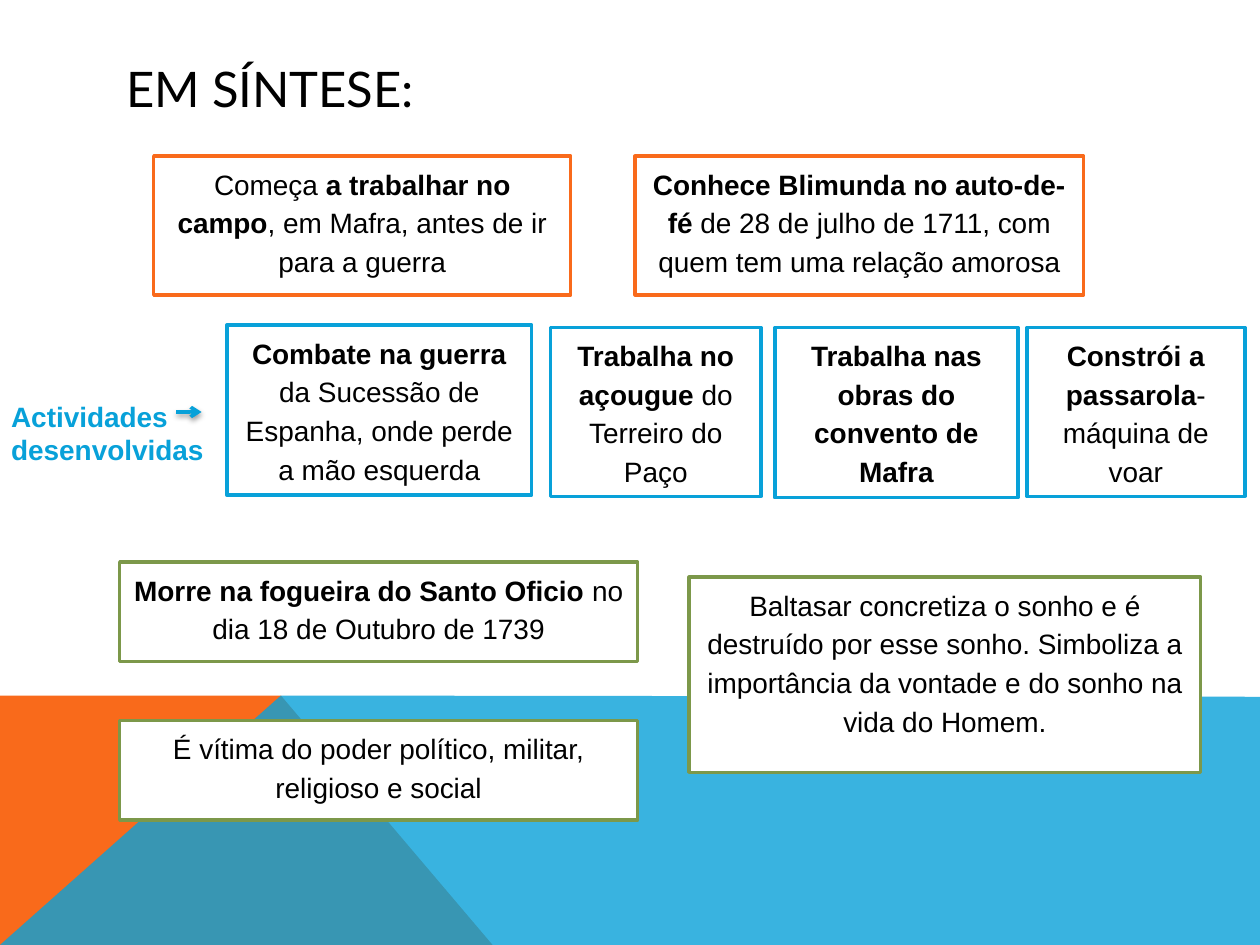
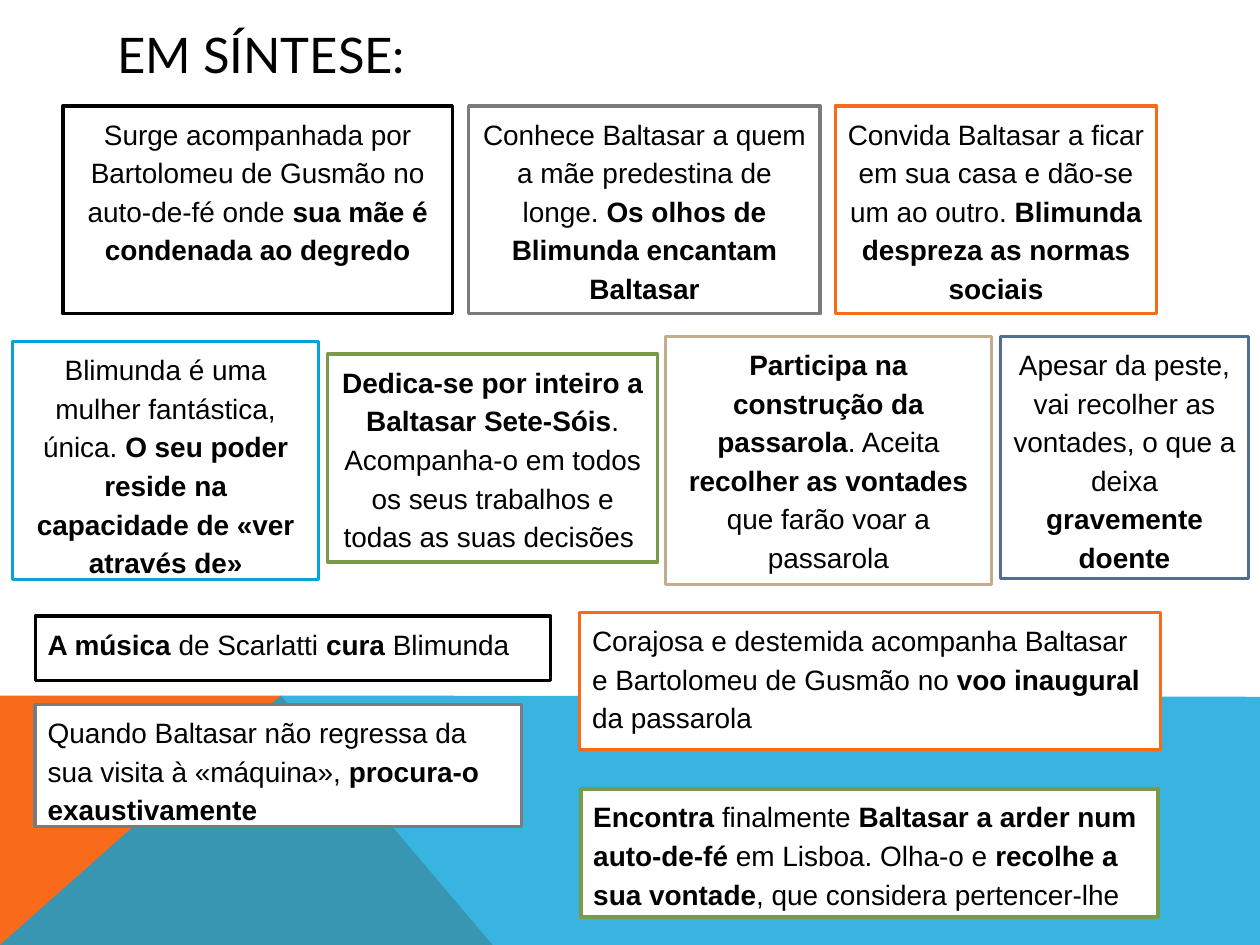
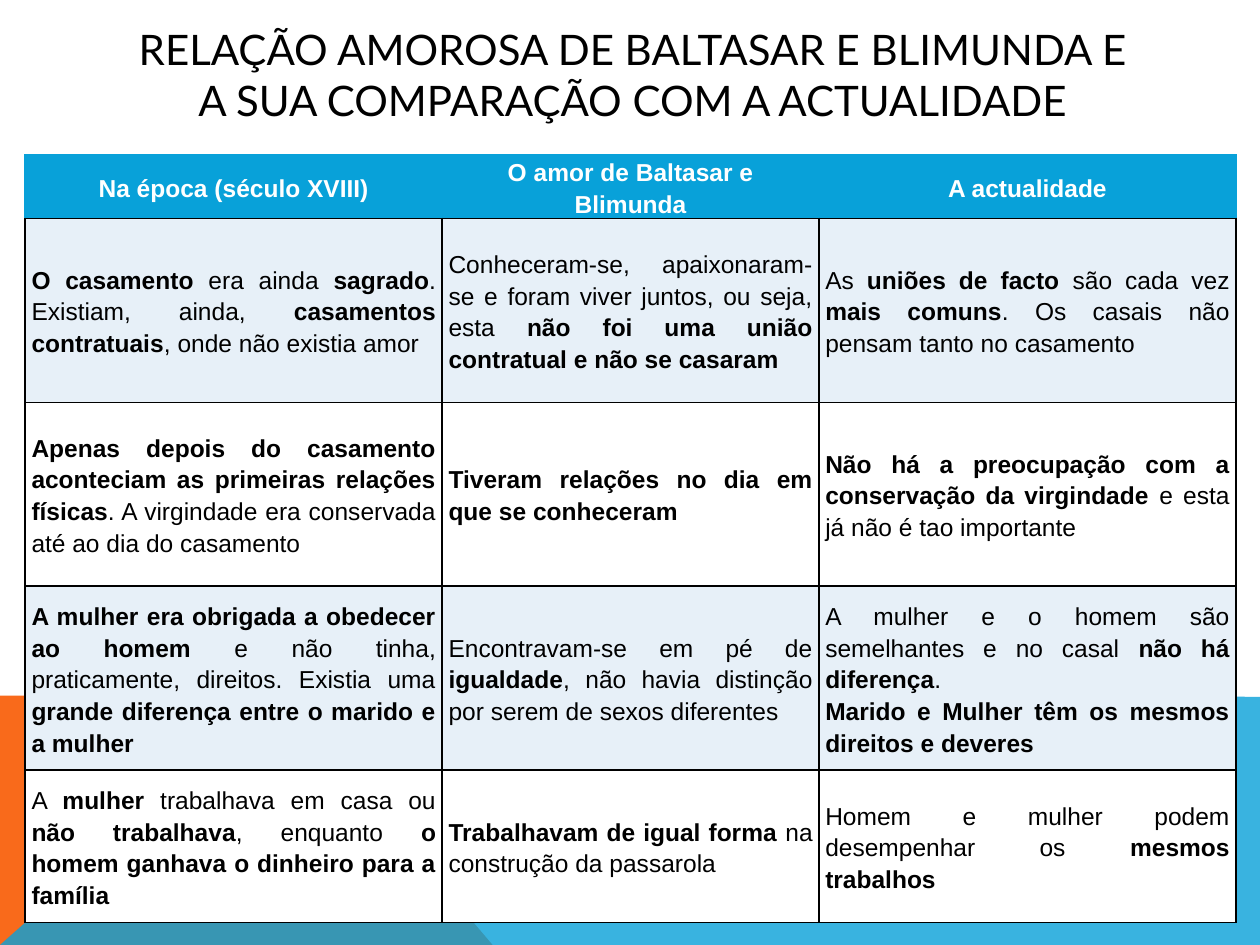
from dataclasses import dataclass

from lxml import etree
from pptx import Presentation
from pptx import util as u
from pptx.dml.color import RGBColor
from pptx.enum import shapes, text
from pptx.oxml import ns

COLORS = {
    "black": "000000",
    "white": "FFFFFF",
    "orange": "F96A1B",
    "blue": "08A1D9",
    "green": "7C984A",
    "gray": "797B7E",
    "tan": "C2AD8D",
    "navy": "506E94",
    "pale": "E7F0F8",
}
COLUMNS, ROWS = 100, 75
WIDTH, HEIGHT = u.Inches(10), u.Inches(7.5)
LEFT, CENTER, JUSTIFY = text.PP_ALIGN.LEFT, text.PP_ALIGN.CENTER, text.PP_ALIGN.JUSTIFY
BODY_FONT, TITLE_FONT = "Arial", "Lato"
LINE_WIDTH = u.Pt(2)


@dataclass
class Card:
    color: str
    left: float
    top: float
    width: float
    height: float
    words: str
    align: text.PP_ALIGN = CENTER


@dataclass
class Band:
    color: str
    opacity: int
    corners: list[tuple[float, float]]


BANDS = [
    Band("orange", 100, [(0, 75), (0, 55.2), (22.3, 55.2), (39.1, 75)]),
    Band("blue", 80, [(0, 75), (22.3, 55.2), (100, 55.3), (100, 75)]),
]

BALTASAR_CARDS = [
    Card("orange", 12.2, 12.4, 33.1, 11,
         "Começa *a trabalhar no campo*, em Mafra, antes de ir para a guerra"),
    Card("orange", 50.4, 12.4, 35.6, 11,
         "*Conhece Blimunda no auto-de-fé *de 28 de julho de 1711, com quem tem uma relação amorosa"),
    Card("blue", 18, 25.8, 24.2, 13.5,
         "*Combate na guerra *da Sucessão de Espanha, onde perde a mão esquerda"),
    Card("blue", 43.7, 26, 16.7, 13.4, "*Trabalha no açougue *do Terreiro do Paço"),
    Card("blue", 61.5, 26, 19.3, 13.5, "*Trabalha nas obras do convento de Mafra*"),
    Card("blue", 81.5, 26, 17.3, 13.4, "*Constrói a passarola*- máquina de voar"),
    Card("green", 9.5, 44.6, 41.1, 7.9,
         "*Morre na fogueira do Santo Oficio *no dia 18 de Outubro de 1739"),
    Card("green", 9.5, 57.2, 41.1, 7.9,
         "É vítima do poder político, militar, religioso e social"),
    Card("green", 54.7, 45.8, 40.6, 15.5,
         "Baltasar concretiza o sonho e é destruído por esse sonho. "
         "Simboliza a importância da vontade e do sonho na vida do Homem."),
]

BLIMUNDA_CARDS = [
    Card("black", 5, 8.4, 30.9, 16.5,
         "Surge acompanhada por Bartolomeu de Gusmão no auto-de-fé onde "
         "*sua mãe é condenada ao degredo*"),
    Card("gray", 37.2, 8.4, 27.9, 16.5,
         "Conhece Baltasar a quem a mãe predestina de longe. "
         "*Os olhos de Blimunda encantam Baltasar*"),
    Card("orange", 66.3, 8.4, 25.5, 16.5,
         "Convida Baltasar a ficar em sua casa e dão-se um ao outro. "
         "*Blimunda despreza as normas sociais*"),
    Card("blue", 1, 27.1, 24.3, 18.9,
         "Blimunda é uma mulher fantástica, única. "
         "*O seu poder reside na capacidade de «ver através de»*"),
    Card("green", 26, 28.1, 26.2, 16.5,
         "*Dedica-se por inteiro a Baltasar Sete-Sóis*. "
         "Acompanha-o em todos os seus trabalhos e todas as suas decisões "),
    Card("tan", 52.8, 26.7, 25.9, 19.7,
         "*Participa na construção da passarola*. Aceita *recolher as vontades *"
         "que farão voar a passarola"),
    Card("navy", 79.4, 26.7, 19.7, 19.2,
         "Apesar da peste, vai recolher as vontades, o que a deixa *gravemente doente*"),
    Card("black", 2.8, 48.9, 40.9, 5.1,
         "*A música *de Scarlatti *cura *Blimunda", LEFT),
    Card("orange", 46, 48.6, 46.1, 10.9,
         "Corajosa e destemida acompanha Baltasar e Bartolomeu de Gusmão no "
         "*voo inaugural *da passarola", LEFT),
    Card("gray", 2.8, 55.9, 38.6, 9.7,
         "Quando Baltasar não regressa da sua visita à «máquina», "
         "*procura-o exaustivamente*", LEFT),
    Card("green", 46.1, 62.6, 45.8, 10.2,
         "*Encontra* finalmente *Baltasar a arder num auto-de-fé* em Lisboa. "
         "Olha-o e *recolhe a sua vontade*, que considera pertencer-lhe", LEFT),
]

LOVE_COLUMNS = [33.1, 29.9, 33.1]
LOVE_ROWS = [4.9, 14.6, 14.6, 14.6, 12.1]
LOVE_CELLS = [
    ["*Na época (século XVIII)*", "*O amor de Baltasar e Blimunda*", "*A actualidade*"],
    ["*O casamento *era ainda *sagrado*. Existiam, ainda, *casamentos contratuais*, "
     "onde não existia amor",
     "Conheceram-se, apaixonaram-se e foram viver juntos, ou seja, esta "
     "*não foi uma união contratual e não se casaram*",
     "As *uniões de facto *são cada vez *mais comuns*. "
     "Os casais não pensam tanto no casamento"],
    ["*Apenas depois do casamento aconteciam as primeiras relações físicas*. "
     "A virgindade era conservada até ao dia do casamento",
     "*Tiveram relações no dia em que se conheceram*",
     "*Não há a preocupação com a conservação da virgindade* "
     "e esta já não é tao importante"],
    ["*A mulher era obrigada a obedecer ao homem *e não tinha, praticamente, direitos. "
     "Existia uma *grande diferença entre o marido e a mulher*",
     "Encontravam-se em pé de *igualdade*, não havia distinção por serem de sexos diferentes",
     "A mulher e o homem são semelhantes e no casal *não há diferença*.\n"
     "*Marido e Mulher têm os mesmos direitos e deveres*"],
    ["A *mulher* trabalhava em casa ou *não trabalhava*, enquanto "
     "*o homem ganhava o dinheiro para a família*",
     "*Trabalhavam de igual forma *na construção da passarola*",
     "Homem e mulher podem desempenhar os *mesmos trabalhos*"],
]


def rgb(name: str) -> RGBColor:
    return RGBColor.from_string(COLORS[name])


def x(columns: float) -> int:
    return round(WIDTH * columns / COLUMNS)


def y(rows: float) -> int:
    return round(HEIGHT * rows / ROWS)


def box(left: float, top: float, width: float, height: float) -> tuple[int, int, int, int]:
    return x(left), y(top), x(width), y(height)


def set_font(p, size: float, color: str, name: str = BODY_FONT) -> None:
    p.font.size, p.font.name = u.Pt(size), name
    p.font.color.rgb = rgb(color)


def write(tf, words: str, size: float, color: str, align: text.PP_ALIGN,
          spacing: float | None = None, after: float = 0) -> None:
    tf.word_wrap = True
    for i, line in enumerate(words.split("\n")):
        p = tf.add_paragraph() if i else tf.paragraphs[0]
        p.alignment, p.line_spacing, p.space_after = align, spacing, u.Pt(after)
        set_font(p, size, color)
        for j, part in enumerate(line.split("*")):
            if part:
                r = p.add_run()
                r.text, r.font.bold = part, j % 2 == 1


def add_bands(layout, s) -> None:
    for i, band in enumerate(BANDS):
        points = [(x(column), y(row)) for column, row in band.corners]
        builder = s.shapes.build_freeform(*points[0], scale=1.0)
        builder.add_line_segments(points[1:], close=True)
        sp = builder.convert_to_shape()
        sp.shadow.inherit = False
        sp.fill.solid()
        sp.fill.fore_color.rgb = rgb(band.color)
        sp.line.fill.background()
        if band.opacity < 100:
            fill = next(sp.element.iter(ns.qn("a:srgbClr")))
            etree.SubElement(fill, ns.qn("a:alpha"), val=str(band.opacity * 1000))
        layout.shapes.element.insert(2 + i, sp.element)


def add_title(s, words: str, left: float, top: float, size: float,
              align: text.PP_ALIGN = LEFT) -> None:
    sp = s.shapes.title
    sp.left, sp.top, sp.width, sp.height = box(left, top, 82.2, 6)
    tf = sp.text_frame
    tf.text = words
    tf.word_wrap, tf.auto_size = True, text.MSO_AUTO_SIZE.NONE
    tf.vertical_anchor = text.MSO_ANCHOR.MIDDLE
    p = tf.paragraphs[0]
    p.alignment = align
    set_font(p, size, "black", TITLE_FONT)


def add_card(s, card: Card) -> None:
    sp = s.shapes.add_shape(shapes.MSO_SHAPE.RECTANGLE,
                            *box(card.left, card.top, card.width, card.height))
    sp.shadow.inherit = False
    sp.fill.solid()
    sp.fill.fore_color.rgb = rgb("white")
    sp.line.color.rgb, sp.line.width = rgb(card.color), LINE_WIDTH
    sp.text_frame.vertical_anchor = text.MSO_ANCHOR.TOP
    write(sp.text_frame, card.words, 16, "black", card.align, 1.15, 10)


def add_activities_label(s) -> None:
    label = s.shapes.add_textbox(*box(-0.1, 31.2, 24.7, 6.4))
    write(label.text_frame, "*Actividades desenvolvidas*", 16, "blue", LEFT)
    arrow = s.shapes.add_connector(shapes.MSO_CONNECTOR.STRAIGHT,
                                   x(14), y(32.7), x(16), y(32.7))
    arrow.line.color.rgb, arrow.line.width = rgb("blue"), LINE_WIDTH
    etree.SubElement(arrow.line._get_or_add_ln(), ns.qn("a:tailEnd"), type="arrow")
    effects = etree.SubElement(arrow.element.spPr, ns.qn("a:effectLst"))
    shadow = etree.SubElement(effects, ns.qn("a:outerShdw"), blurRad=str(u.Pt(3.1)),
                              dist=str(u.Pt(1.6)), dir="5400000", rotWithShape="0")
    shade = etree.SubElement(shadow, ns.qn("a:srgbClr"), val=COLORS["black"])
    etree.SubElement(shade, ns.qn("a:alpha"), val="38000")


def set_borders(cell, sides: dict[str, str]) -> None:
    tc_pr = cell._tc.get_or_add_tcPr()
    for i, (side, color) in enumerate(sides.items()):
        ln = etree.Element(ns.qn(f"a:ln{side}"), w=str(u.Pt(1)))
        fill = etree.SubElement(ln, ns.qn("a:solidFill"))
        etree.SubElement(fill, ns.qn("a:srgbClr"), val=COLORS[color])
        tc_pr.insert(i, ln)


def add_love_table(s) -> None:
    frame = s.shapes.add_table(len(LOVE_ROWS), len(LOVE_COLUMNS),
                               *box(2, 12.3, sum(LOVE_COLUMNS), sum(LOVE_ROWS)))
    table = frame.table
    table.horz_banding = False
    for column, width in zip(table.columns, LOVE_COLUMNS):
        column.width = x(width)
    for i, (row, height) in enumerate(zip(table.rows, LOVE_ROWS)):
        row.height = y(height)
        header = i == 0
        edge = "blue" if header else "black"
        background = "blue" if header else "pale" if i % 2 else "white"
        for cell, words in zip(row.cells, LOVE_CELLS[i]):
            cell.margin_left = cell.margin_right = u.Inches(0.05)
            cell.margin_top = cell.margin_bottom = 0
            cell.vertical_anchor = text.MSO_ANCHOR.MIDDLE
            cell.fill.solid()
            cell.fill.fore_color.rgb = rgb(background)
            set_borders(cell, {"L": edge, "R": edge, "T": edge, "B": "black"}
                        if i < 2 and header else
                        {"L": edge, "R": edge, "T": edge, "B": edge})
            write(cell.text_frame, words, 14, "white" if header else "black",
                  CENTER if header else JUSTIFY, 1.15)


def main() -> None:
    prs = Presentation()
    prs.slide_width, prs.slide_height = WIDTH, HEIGHT
    layout = prs.slide_layouts[5]
    baltasar, blimunda, love = [prs.slides.add_slide(layout) for _ in range(3)]
    add_bands(layout, baltasar)

    add_title(baltasar, "EM SÍNTESE:", 9, 4, 28)
    add_title(blimunda, "EM SÍNTESE:", 8.3, 1.3, 28)
    for s, cards in ((baltasar, BALTASAR_CARDS), (blimunda, BLIMUNDA_CARDS)):
        for card in cards:
            add_card(s, card)
    add_activities_label(baltasar)

    add_title(love, "RELAÇÃO AMOROSA DE BALTASAR E BLIMUNDA E A SUA COMPARAÇÃO COM A ACTUALIDADE",
              9.1, 2.9, 24, CENTER)
    add_love_table(love)
    prs.save("out.pptx")


if __name__ == "__main__":
    main()
